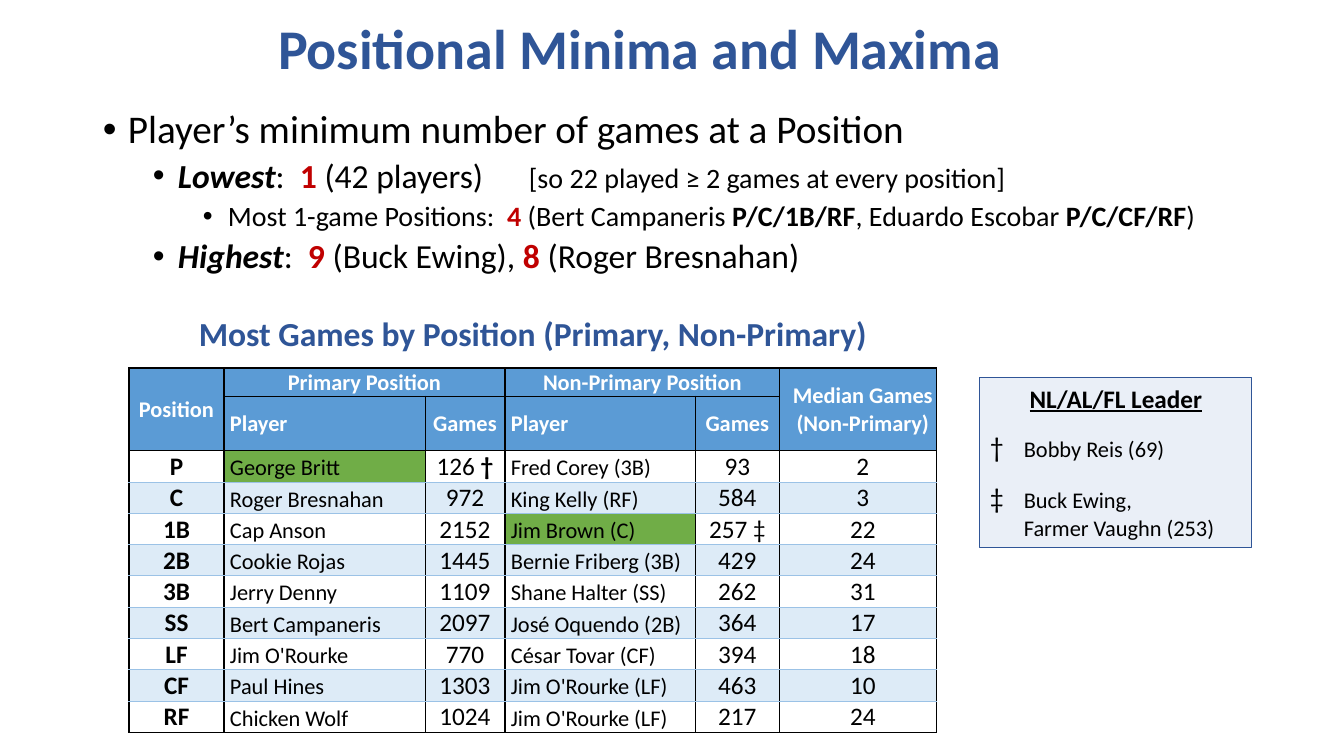
from lxml.etree import SubElement
from pptx import Presentation
from pptx.dml.color import RGBColor
from pptx.enum.shapes import MSO_SHAPE
from pptx.enum.text import MSO_ANCHOR, MSO_AUTO_SIZE, PP_ALIGN
from pptx.oxml.ns import qn
from pptx.util import Emu, Pt

TITLE = "Positional Minima and Maxima"
SUBTITLE = "Most Games by Position (Primary, Non-Primary)"
RED = RGBColor(0xC0, 0x00, 0x00)
BLUE = RGBColor(0x2F, 0x55, 0x97)
BLACK = RGBColor(0x00, 0x00, 0x00)
WHITE = RGBColor(0xFF, 0xFF, 0xFF)
HEADER = RGBColor(0x5B, 0x9B, 0xD5)
BAND = RGBColor(0xDD, 0xEB, 0xF7)
GREEN = RGBColor(0x70, 0xAD, 0x47)
GRID = RGBColor(0x9B, 0xC2, 0xE6)
PALE = RGBColor(0xEA, 0xEF, 0xF7)

BOLD = dict(bold=True)
KEY = dict(bold=True, italic=True)
NUM = dict(bold=True, color=RED)
BULLETS = [
    (0, 28, [("Player’s minimum number of games at a Position", {})]),
    (1, 24, [("Lowest", KEY), (":  ", {}), ("1", NUM), (" (42 players)\t", {}),
             ("[so 22 played ≥ 2 games at every position]", dict(size=20))]),
    (2, 20, [("Most 1-game Positions:  ", {}), ("4", NUM), (" (Bert Campaneris ", {}),
             ("P/C/1B/RF", BOLD), (", Eduardo Escobar ", {}), ("P/C/CF/RF", BOLD), (")", {})]),
    (1, 24, [("Highest", KEY), (":  ", {}), ("9", NUM), (" (Buck Ewing), ", {}),
             ("8", NUM), (" (Roger Bresnahan)", {})]),
]
HEADS = [
    ("Position", "Primary Position", "", "Non-Primary Position", "", "Median Games (Non-Primary)"),
    ("", "Player", "Games", "Player", "Games", ""),
]
LEADERS = [
    ("P", "George Britt", "126 †", "Fred Corey (3B)", "93", "2"),
    ("C", "Roger Bresnahan", "972", "King Kelly (RF)", "584", "3"),
    ("1B", "Cap Anson", "2152", "Jim Brown (C)", "257 ‡", "22"),
    ("2B", "Cookie Rojas", "1445", "Bernie Friberg (3B)", "429", "24"),
    ("3B", "Jerry Denny", "1109", "Shane Halter (SS)", "262", "31"),
    ("SS", "Bert Campaneris", "2097", "José Oquendo (2B)", "364", "17"),
    ("LF", "Jim O'Rourke", "770", "César Tovar (CF)", "394", "18"),
    ("CF", "Paul Hines", "1303", "Jim O'Rourke (LF)", "463", "10"),
    ("RF", "Chicken Wolf", "1024", "Jim O'Rourke (LF)", "217", "24"),
]
MERGES = [(0, 0, 1, 0), (0, 1, 0, 2), (0, 3, 0, 4), (0, 5, 1, 5)]
HIGHLIGHTS = {"George Britt", "Jim Brown (C)"}
COL_W = [95, 201, 80, 190, 85, 157]
ROW_H = [26, 30] + [29] * 8 + [30]
PLAYER_COLS = (1, 3)
LEGEND = [("†", "Bobby Reis (69)", 12), ("‡", "Buck Ewing,", 12), ("", "Farmer Vaughn (253)", 0)]


def px(n):
    return Emu(round(n * 914400 / 100.8))


def add_text(p, text, size=16, color=BLACK, bold=False, italic=False, underline=False):
    r = p.add_run()
    r.text = text
    f = r.font
    f.name, f.size, f.bold, f.italic, f.underline = "Calibri", Pt(size), bold, italic, underline
    f.color.rgb = color


def add_box(x, y, w, h):
    tf = slide.shapes.add_textbox(px(x), px(y), px(w), px(h)).text_frame
    tf.word_wrap = True
    return tf


def set_indent(p, left, first):
    pPr = p._p.get_or_add_pPr()
    pPr.set("marL", str(px(left)))
    pPr.set("indent", str(px(first)))
    return pPr


def set_border(cell, side, width, color):
    ln = SubElement(cell._tc.get_or_add_tcPr(), qn("a:ln" + side), w=str(Pt(width)))
    SubElement(SubElement(ln, qn("a:solidFill")), qn("a:srgbClr"), val=str(color))


def row_line(y):
    if y in (0, 2, len(ROW_H)):
        return 1, BLACK
    return 0.5, BLACK if y == 1 else GRID


def col_line(x):
    return 0.5 if x in (2, 4) else 1, BLACK


prs = Presentation()
prs.slide_width, prs.slide_height = px(1344), px(756)
slide = prs.slides.add_slide(prs.slide_layouts[6])

tf = add_box(28, 16, 1223, 71)
tf.vertical_anchor = MSO_ANCHOR.MIDDLE
p = tf.paragraphs[0]
p.alignment, p.line_spacing = PP_ALIGN.CENTER, 0.9
add_text(p, TITLE, size=40, color=BLUE, bold=True)

tf = add_box(93, 105, 1159, 615)
for i, (level, size, runs) in enumerate(BULLETS):
    p = tf.add_paragraph() if i else tf.paragraphs[0]
    p.level, p.line_spacing = level, 0.9
    if i:
        p.space_before = Pt(5)
    pPr = set_indent(p, 25 + 50 * level, -25)
    SubElement(pPr, qn("a:buFont"), typeface="Arial")
    SubElement(pPr, qn("a:buChar"), char="•")
    if level == 1:
        SubElement(SubElement(pPr, qn("a:tabLst")), qn("a:tab"), pos=str(px(426)), algn="l")
    for text, fmt in runs:
        add_text(p, text, **{"size": size, **fmt})

table = slide.shapes.add_table(len(ROW_H), len(COL_W), px(129), px(368),
                               px(sum(COL_W)), px(sum(ROW_H))).table
table.first_row = table.horz_banding = False
for col, w in zip(table.columns, COL_W):
    col.width = px(w)
for row, h in zip(table.rows, ROW_H):
    row.height = px(h)
for r0, c0, r1, c1 in MERGES:
    table.cell(r0, c0).merge(table.cell(r1, c1))

for y, values in enumerate(HEADS + LEADERS):
    head = y < len(HEADS)
    for x, value in enumerate(values):
        cell = table.cell(y, x)
        if cell.is_spanned:
            continue
        right = x + (cell.span_width if cell.is_merge_origin else 1)
        bottom = y + (cell.span_height if cell.is_merge_origin else 1)
        for side, line in (("L", col_line(x)), ("R", col_line(right)),
                           ("T", row_line(y)), ("B", row_line(bottom))):
            set_border(cell, side, *line)
        fill = HEADER if head else GREEN if value in HIGHLIGHTS else BAND if y % 2 else None
        if fill is None:
            cell.fill.background()
        else:
            cell.fill.solid()
            cell.fill.fore_color.rgb = fill
        player = x in PLAYER_COLS and y > 0
        cell.margin_left = px(10 if x == 5 else 6 if player else 1)
        cell.margin_right = cell.margin_top = px(1)
        cell.margin_bottom = 0
        cell.vertical_anchor = MSO_ANCHOR.MIDDLE if head else MSO_ANCHOR.BOTTOM
        p = cell.text_frame.paragraphs[0]
        p.alignment = PP_ALIGN.LEFT if player else PP_ALIGN.CENTER
        size = 16 if head or player else 18
        main, dagger, _ = value.partition("†")
        add_text(p, main, size=size, color=WHITE if head else BLACK, bold=head or x == 0)
        if dagger:
            add_text(p, dagger, size=size, bold=True)

tf = add_box(162, 308, 742, 50)
tf.auto_size = MSO_AUTO_SIZE.SHAPE_TO_FIT_TEXT
p = tf.paragraphs[0]
p.alignment = PP_ALIGN.CENTER
add_text(p, SUBTITLE, size=24, color=BLUE, bold=True)

sp = slide.shapes.add_shape(MSO_SHAPE.RECTANGLE, px(980), px(378), px(272), px(170))
sp.shadow.inherit = False
sp.fill.solid()
sp.fill.fore_color.rgb = PALE
sp.line.color.rgb, sp.line.width = BLUE, Pt(0.75)
tf = sp.text_frame
tf.word_wrap, tf.auto_size = True, MSO_AUTO_SIZE.SHAPE_TO_FIT_TEXT
tf.vertical_anchor = MSO_ANCHOR.TOP
p = tf.paragraphs[0]
p.alignment = PP_ALIGN.CENTER
add_text(p, "NL/AL/FL Leader", size=18, bold=True, underline=True)
for mark, name, gap in LEGEND:
    p = tf.add_paragraph()
    p.alignment, p.space_before = PP_ALIGN.LEFT, Pt(gap)
    set_indent(p, 34, -34 if mark else 0)
    if mark:
        add_text(p, mark + "\t", size=20)
    add_text(p, name)

prs.save("out.pptx")
